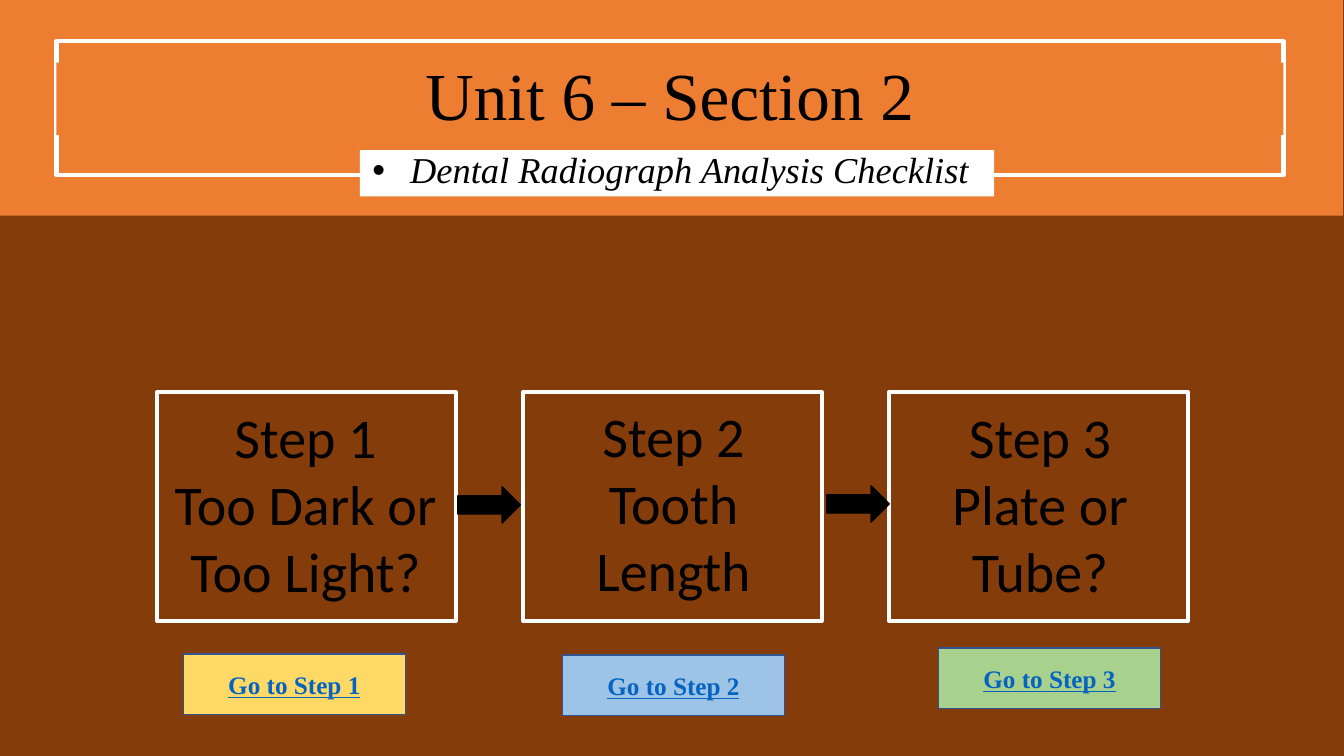
import dataclasses

import pptx
import pptx.util
import pptx.dml.color
import pptx.enum.shapes
import pptx.enum.text
import pptx.oxml.ns
import lxml.etree

Inches = pptx.util.Inches
Pt = pptx.util.Pt
Shape = pptx.enum.shapes.MSO_SHAPE
Anchor = pptx.enum.text.MSO_ANCHOR
AutoSize = pptx.enum.text.MSO_AUTO_SIZE


@dataclasses.dataclass(frozen=True)
class Theme:
    background: str = "843C0B"
    banner: str = "ED7D31"
    white: str = "FFFFFF"
    black: str = "000000"
    button_line: str = "325491"
    button_text: str = "0563C1"
    button_fills: tuple = ("FFD966", "9DC3E6", "A9D18E")
    serif: str = "Times New Roman"
    sans: str = "Calibri"
    title_size: int = 48
    subtitle_size: int = 26
    step_size: int = 40
    button_size: int = 18
    frame_width: int = 3
    thin_width: int = 1


THEME = Theme()

STEPS = (
    (("Step 1", "Too Dark or Too Light?"), (1.52, 3.94, 3.02, 2.12)),
    (("Step 2", "Tooth Length"), (5.17, 3.93, 3.02, 2.12)),
    (("Step 3", "Plate or Tube?"), (8.98, 3.94, 2.67, 2.12)),
)
FRAME_LEFT, FRAME_PITCH = 1.56, 3.63
ARROW_SPOTS = ((4.54, 4.83), (8.2, 4.82))
BUTTON_SPOTS = ((1.82, 6.49), (5.58, 6.5), (9.31, 6.43))


def rgb(code):
    return pptx.dml.color.RGBColor.from_string(code)


def place(shape, box):
    shape.left, shape.top, shape.width, shape.height = map(Inches, box)


def write(shape, lines, *, font, size, color=THEME.black, bold=False, italic=False,
          underline=False, spacing=1.0, anchor=Anchor.TOP, auto_size=AutoSize.NONE):
    frame = shape.text_frame
    frame.word_wrap = True
    frame.auto_size = auto_size
    frame.vertical_anchor = anchor
    frame.text = "\n".join(lines)
    for paragraph in frame.paragraphs:
        paragraph.alignment = pptx.enum.text.PP_ALIGN.CENTER
        paragraph.line_spacing = spacing
        paragraph.space_before = Pt(0)
        for run in paragraph.runs:
            run.font.name = font
            run.font.size = Pt(size)
            run.font.color.rgb = rgb(color)
            run.font.bold = bold
            run.font.italic = italic
            run.font.underline = underline


def add_block(slide, kind, box, fill=None, line=None, width=THEME.thin_width):
    block = slide.shapes.add_shape(kind, *map(Inches, box))
    block.shadow.inherit = False
    if fill:
        block.fill.solid()
        block.fill.fore_color.rgb = rgb(fill)
    else:
        block.fill.background()
    if line:
        block.line.color.rgb = rgb(line)
        block.line.width = Pt(width)
    else:
        block.line.fill.background()
    return block


def add_frame(slide, box):
    add_block(slide, Shape.RECTANGLE, box, line=THEME.white, width=THEME.frame_width)


def remove_bullet(paragraph):
    properties = paragraph._p.get_or_add_pPr()
    properties.set("marL", "0")
    properties.set("indent", "0")
    lxml.etree.SubElement(properties, pptx.oxml.ns.qn("a:buNone"))


def add_heading(slide):
    title, subtitle = slide.shapes.title, slide.placeholders[1]
    add_block(slide, Shape.RECTANGLE, (-0.01, 0, 13.33, 2.14), fill=THEME.banner)
    add_block(slide, Shape.RECTANGLE, (3.57, 1.49, 6.29, 0.46), fill=THEME.white)
    add_frame(slide, (0.56, 0.41, 12.17, 1.33))
    for placeholder in (subtitle, title):
        slide.shapes.element.append(placeholder.element)

    place(subtitle, (3.59, 1.46, 6.13, 0.52))
    remove_bullet(subtitle.text_frame.paragraphs[0])
    write(subtitle, ["Dental Radiograph Analysis Checklist"], font=THEME.serif,
          size=THEME.subtitle_size, italic=True, spacing=0.9)

    place(title, (0.56, 0.62, 12.17, 0.72))
    title.fill.solid()
    title.fill.fore_color.rgb = rgb(THEME.banner)
    write(title, ["Unit 6 – Section 2"], font=THEME.serif, size=THEME.title_size,
          spacing=0.9, anchor=Anchor.MIDDLE)


def add_step(slide, lines, box):
    step = slide.shapes.add_textbox(*map(Inches, box))
    write(step, lines, font=THEME.sans, size=THEME.step_size,
          auto_size=AutoSize.SHAPE_TO_FIT_TEXT)


def add_button(slide, number, spot, fill):
    button = add_block(slide, Shape.RECTANGLE, (*spot, 2.2, 0.6), fill, THEME.button_line)
    write(button, [f"Go to Step {number}"], font=THEME.serif, size=THEME.button_size,
          color=THEME.button_text, bold=True, underline=True, anchor=Anchor.MIDDLE)


def main():
    deck = pptx.Presentation()
    deck.slide_width, deck.slide_height = Inches(13.33), Inches(7.5)
    slide = deck.slides.add_slide(deck.slide_layouts[1])
    slide.background.fill.solid()
    slide.background.fill.fore_color.rgb = rgb(THEME.background)

    for index in range(len(STEPS)):
        add_frame(slide, (FRAME_LEFT + index * FRAME_PITCH, 3.89, 2.96, 2.27))
    add_heading(slide)
    for lines, box in STEPS:
        add_step(slide, lines, box)
    for spot in ARROW_SPOTS:
        add_block(slide, Shape.RIGHT_ARROW, (*spot, 0.62, 0.36), THEME.black, THEME.black)
    for number, (spot, fill) in enumerate(zip(BUTTON_SPOTS, THEME.button_fills), 1):
        add_button(slide, number, spot, fill)

    deck.save("out.pptx")


if __name__ == "__main__":
    main()
